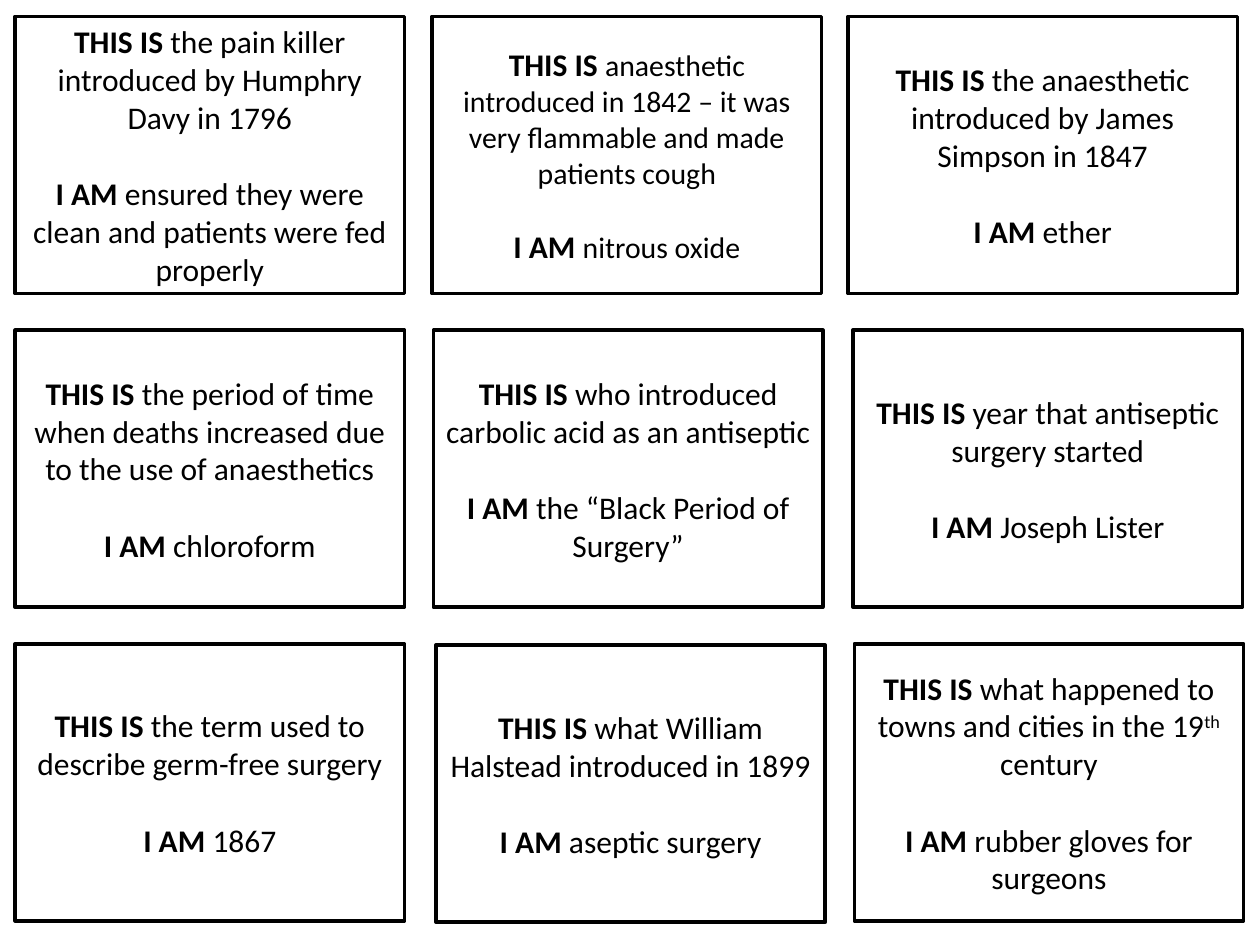
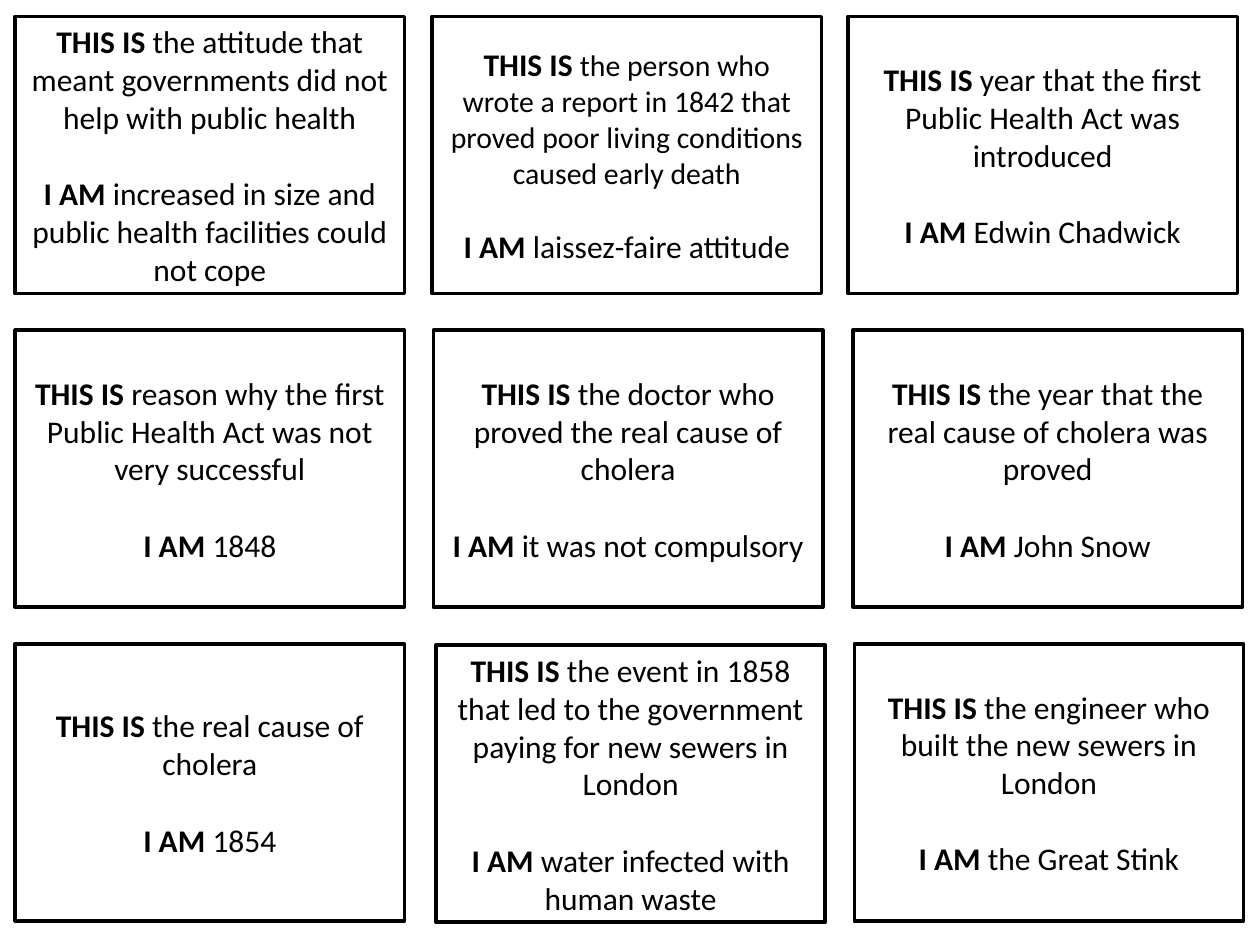
from pptx import Presentation
from pptx.dml.color import RGBColor
from pptx.enum import shapes, text
from pptx.util import Inches, Pt

COLOURS = {"card": "FFFFFF", "ink": "000000"}
FONT = "Calibri"
BODY_SIZE, TIGHT_SIZE = 18, 17
LINE_HEIGHT = 1.22
CARD_WIDTH, CARD_HEIGHT = 3.09, 2.2

# Left and top of each card, row by row
CARD_SPOTS = [
    (0.12, 0.13), (3.43, 0.13), (6.73, 0.13),
    (0.12, 2.62), (3.44, 2.62), (6.77, 2.62),
    (0.12, 5.11), (3.46, 5.12), (6.78, 5.11),
]

# Each card: clue, answer, and optionally the sizes of the two.
# Text between ^ marks is superscript.
SURGERY_CARDS = [
    ("the pain killer introduced by Humphry Davy in 1796",
     "ensured they were clean and patients were fed properly"),
    ("anaesthetic introduced in 1842 – it was very flammable and made patients cough",
     "nitrous oxide", TIGHT_SIZE, TIGHT_SIZE),
    ("the anaesthetic introduced by James Simpson in 1847", "ether"),
    ("the period of time when deaths increased due to the use of anaesthetics",
     "chloroform"),
    ("who introduced carbolic acid as an antiseptic", "the “Black Period of Surgery”"),
    ("year that antiseptic surgery started", "Joseph Lister"),
    ("the term used to describe germ-free surgery", "1867"),
    ("what William Halstead introduced in 1899", "aseptic surgery"),
    ("what happened to towns and cities in the 19^th^ century",
     "rubber gloves for surgeons"),
]

PUBLIC_HEALTH_CARDS = [
    ("the attitude that meant governments did not help with public health",
     "increased in size and public health facilities could not cope"),
    ("the person who wrote a report in 1842 that proved poor living conditions "
     "caused early death", "laissez-faire attitude", TIGHT_SIZE),
    ("year that the first Public Health Act was introduced", "Edwin Chadwick"),
    ("reason why the first Public Health Act was not very successful", "1848"),
    ("the doctor who proved the real cause of cholera", "it was not compulsory"),
    ("the year that the real cause of cholera was proved", "John Snow"),
    ("the real cause of cholera", "1854"),
    ("the event in 1858 that led to the government paying for new sewers in London",
     "water infected with human waste"),
    ("the engineer who built the new sewers in London", "the Great Stink"),
]


def colour(name):
    return RGBColor.from_string(COLOURS[name])


def add_run(paragraph, words, size=BODY_SIZE, bold=False, superscript=False):
    run = paragraph.add_run()
    run.text = words
    run.font.name = FONT
    run.font.size = Pt(size)
    run.font.bold = bold
    run.font.color.rgb = colour("ink")
    if superscript:
        run._r.get_or_add_rPr().set("baseline", "30000")


class CardDeck:
    def __init__(self):
        self.presentation = Presentation()
        self.presentation.slide_width = Inches(10)
        self.presentation.slide_height = Inches(7.5)
        self.slide = None

    def new_slide(self):
        blank = self.presentation.slide_layouts[6]
        self.slide = self.presentation.slides.add_slide(blank)

    def statement(self, paragraph, label, words, size):
        """Write a bold label followed by plain words."""
        paragraph.alignment = text.PP_ALIGN.CENTER
        add_run(paragraph, label + " ", bold=True)
        for index, part in enumerate(words.split("^")):
            add_run(paragraph, part, size=size, superscript=index % 2 == 1)

    def card(self, left, top, clue, answer, clue_size=BODY_SIZE, answer_size=BODY_SIZE):
        card = self.slide.shapes.add_shape(
            shapes.MSO_SHAPE.RECTANGLE, Inches(left), Inches(top),
            Inches(CARD_WIDTH), Inches(CARD_HEIGHT))
        card.shadow.inherit = False
        card.fill.solid()
        card.fill.fore_color.rgb = colour("card")
        card.line.color.rgb = colour("ink")
        card.line.width = Pt(2)

        frame = card.text_frame
        frame.word_wrap = True
        frame.vertical_anchor = text.MSO_ANCHOR.MIDDLE
        self.statement(frame.paragraphs[0], "THIS IS", clue, clue_size)
        reply = frame.add_paragraph()
        reply.space_before = Pt(clue_size * LINE_HEIGHT)
        self.statement(reply, "I AM", answer, answer_size)

    def card_sheet(self, cards):
        self.new_slide()
        for spot, content in zip(CARD_SPOTS, cards):
            self.card(*spot, *content)


def main():
    deck = CardDeck()
    for cards in (SURGERY_CARDS, PUBLIC_HEALTH_CARDS):
        deck.card_sheet(cards)
    deck.presentation.save("out.pptx")


if __name__ == "__main__":
    main()
